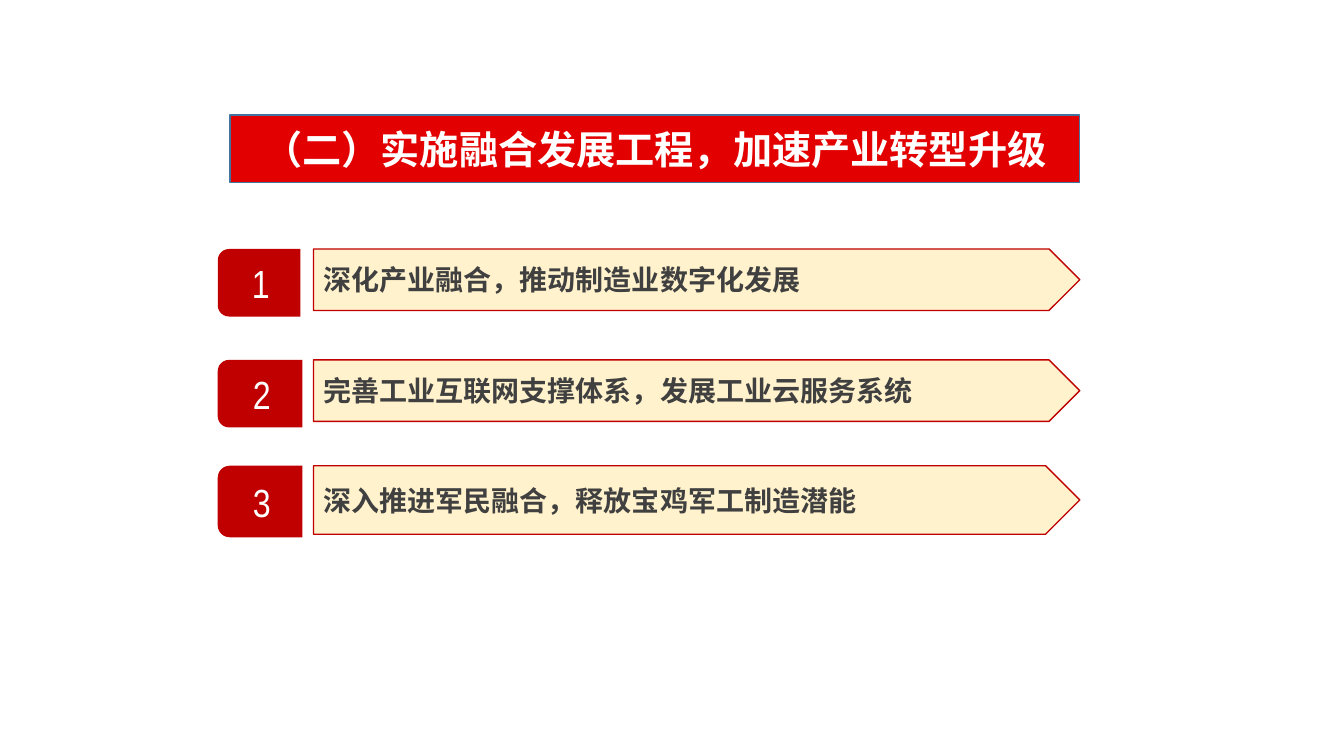
from dataclasses import dataclass

from lxml import etree
from pptx import Presentation
from pptx.dml.color import RGBColor
from pptx.enum.shapes import MSO_SHAPE
from pptx.enum.text import MSO_ANCHOR, PP_ALIGN
from pptx.oxml.ns import qn
from pptx.util import Inches, Pt

ARROW = MSO_SHAPE.PENTAGON
BADGE = MSO_SHAPE.ROUND_2_SAME_RECTANGLE
BANNER = MSO_SHAPE.FLOWCHART_PROCESS
LEFT, CENTER = PP_ALIGN.LEFT, PP_ALIGN.CENTER
MIDDLE = MSO_ANCHOR.MIDDLE

CRIMSON = RGBColor(0xC0, 0x00, 0x00)
CREAM = RGBColor(0xFF, 0xF2, 0xCC)
GRAY = RGBColor(0x40, 0x40, 0x40)
WHITE = RGBColor(0xFF, 0xFF, 0xFF)
RED = RGBColor(0xE3, 0x00, 0x00)
MAROON = RGBColor(0x76, 0x03, 0x03)
BLUE = RGBColor(0x43, 0x73, 0x9E)

HAN = "Noto Sans CJK SC"
CELL = Inches(0.1)  # one grid column or row
ARROW_COL, ARROW_COLS = 31.1, 76
BADGE_COL = 21.6


@dataclass
class Box:
    col: float
    row: float
    cols: float
    rows: float


@dataclass
class Style:
    font: str
    size: int
    color: RGBColor
    bold: bool
    align: PP_ALIGN


@dataclass
class Item:
    text: str
    row: float
    arrow_rows: float
    badge_cols: float
    badge_rows: float


TITLE = Style("Calibri", 28, WHITE, True, CENTER)
LABEL = Style(HAN, 20, GRAY, True, LEFT)
NUMBER = Style("Arial Narrow", 28, WHITE, False, CENTER)

ITEMS = [
    Item("深化产业融合，推动制造业数字化发展", 24.7, 6.1, 8.2, 6.7),
    Item("完善工业互联网支撑体系，发展工业云服务系统", 35.7, 6.1, 8.4, 6.7),
    Item("深入推进军民融合，释放宝鸡军工制造潜能", 46.2, 6.8, 8.4, 7.1),
]


def add_box(slide, kind: MSO_SHAPE, box: Box, text: str, style: Style):
    sizes = (box.col, box.row, box.cols, box.rows)
    shape = slide.shapes.add_shape(kind, *(round(n * CELL) for n in sizes))
    shape.shadow.inherit = False
    frame = shape.text_frame
    frame.word_wrap = True
    frame.vertical_anchor = MIDDLE
    para = frame.paragraphs[0]
    para.alignment = style.align
    run = para.add_run()
    run.text = text
    font = run.font
    font.name, font.size, font.bold = style.font, Pt(style.size), style.bold
    font.color.rgb = style.color
    # East Asian typeface
    etree.SubElement(run._r.get_or_add_rPr(), qn("a:ea"), typeface=HAN)
    return shape


def add_arrow(slide, item: Item) -> None:
    box = Box(ARROW_COL, item.row, ARROW_COLS, item.arrow_rows)
    shape = add_box(slide, ARROW, box, item.text, LABEL)
    shape.fill.solid()
    shape.fill.fore_color.rgb = CREAM
    shape.line.color.rgb = CRIMSON
    shape.line.width = Pt(1)


def add_badge(slide, item: Item, number: int) -> None:
    # Turned a quarter about its centre, so width and height swap
    wide, high = item.badge_cols, item.badge_rows
    shift = (wide - high) / 2
    box = Box(BADGE_COL + shift, item.row - shift, high, wide)
    shape = add_box(slide, BADGE, box, str(number), NUMBER)
    shape.rotation = 270
    shape.text_frame._txBody.bodyPr.set("vert", "vert")
    shape.fill.solid()
    shape.fill.fore_color.rgb = CRIMSON
    shape.line.fill.background()


def add_banner(slide, text: str) -> None:
    shape = add_box(slide, BANNER, Box(22.8, 11.4, 84.3, 6.7), text, TITLE)
    shape.fill.gradient()
    shape.fill.gradient_angle = 270
    stops = zip(shape.fill.gradient_stops, (RED, MAROON), (0.99, 1))
    for stop, color, place in stops:
        stop.color.rgb = color
        stop.position = place
    shape.line.color.rgb = BLUE
    shape.line.width = Pt(1)


def main() -> None:
    deck = Presentation()
    deck.slide_width, deck.slide_height = Inches(13.33), Inches(7.5)
    slide = deck.slides.add_slide(deck.slide_layouts[6])

    # Numbered arrows
    for number, item in enumerate(ITEMS, 1):
        add_arrow(slide, item)
        add_badge(slide, item, number)

    # Heading
    add_banner(slide, "（二）实施融合发展工程，加速产业转型升级")
    deck.save("out.pptx")


if __name__ == "__main__":
    main()
